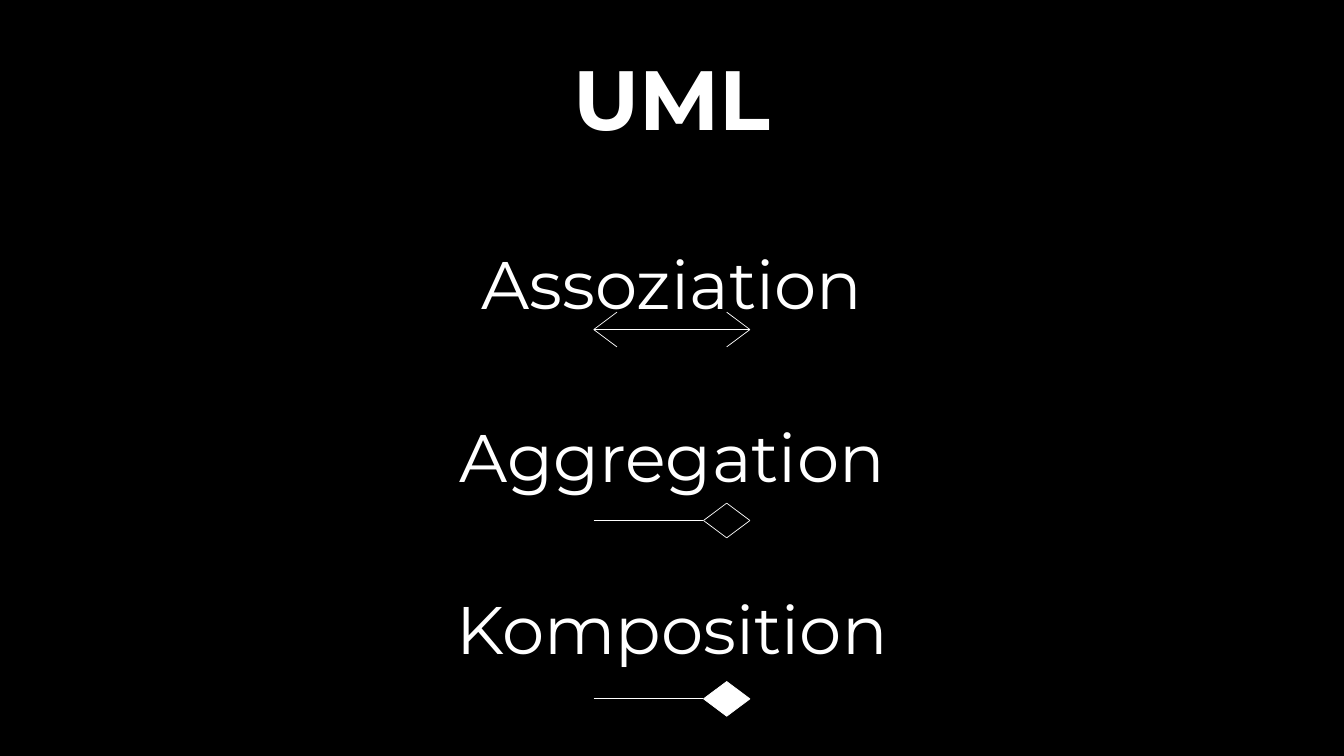
from lxml import etree
from pptx import Presentation
from pptx.dml.color import RGBColor
from pptx.enum import shapes, text
from pptx.oxml.ns import qn
from pptx.util import Pt

COLORS = {"background": "000000", "ink": "FFFFFF"}
FONT = "Montserrat"

# Content: box, paragraphs, size, bold, line spacing, space between
TEXTS = [
    ((10.8, 22.3, 938.4, 102.2), ["UML"], 60, True, 0.9, 0),
    ((10.8, 140.4, 938.4, 312.5),
     ["Assoziation", "Aggregation", "Komposition"], 48, False, 2, 8),
]
# Symbols: kind, height of the axis
SYMBOLS = [("arrows", 235.4), ("open", 371.8), ("filled", 499.2)]
LEFT, RIGHT = 424.1, 535.7
HEAD_W, HEAD_H = 16.6, 12.4


def rgb(name):
    return RGBColor.from_string(COLORS[name])


def add_text(s, box, lines, size, bold, spacing, gap):
    tf = s.shapes.add_textbox(*map(Pt, box)).text_frame
    tf.word_wrap = True
    tf.vertical_anchor = text.MSO_ANCHOR.MIDDLE
    for i, line in enumerate(lines):
        p = tf.add_paragraph() if i else tf.paragraphs[0]
        p.alignment = text.PP_ALIGN.CENTER
        p.line_spacing = spacing
        p.space_before = Pt(gap if i else 0)
        r = p.add_run()
        r.text = line
        r.font.name, r.font.size, r.font.bold = FONT, Pt(size), bold
        r.font.color.rgb = rgb("ink")


def add_line(group, x1, y1, x2, y2):
    c = group.shapes.add_connector(
        shapes.MSO_CONNECTOR.STRAIGHT, Pt(x1), Pt(y1), Pt(x2), Pt(y2))
    c.line.color.rgb = rgb("ink")
    c.line.width = Pt(0.5)
    etree.SubElement(c._element.spPr, qn("a:effectLst"))
    return c


def add_symbol(s, kind, y):
    group = s.shapes.add_group_shape()
    diamond_left = RIGHT - 2 * HEAD_W
    diamond = None
    if kind == "filled":
        diamond = group.shapes.add_shape(
            shapes.MSO_SHAPE.DIAMOND, Pt(diamond_left), Pt(y - HEAD_H),
            Pt(2 * HEAD_W), Pt(2 * HEAD_H))
        diamond.shadow.inherit = False
        diamond.fill.solid()
        diamond.fill.fore_color.rgb = rgb("ink")
        diamond.line.fill.background()

    # Axis, then two strokes from each tip
    start = LEFT if kind == "arrows" else diamond_left
    axis_end = RIGHT if kind == "arrows" else diamond_left
    axis = add_line(group, LEFT, y, axis_end, y)
    if diamond is not None:
        axis.end_connect(diamond, 1)
    for tip, inward in ((RIGHT, -HEAD_W), (start, HEAD_W)):
        for rise in (-HEAD_H, HEAD_H):
            add_line(group, tip, y, tip + inward, y + rise)


prs = Presentation()
prs.slide_width, prs.slide_height = Pt(960), Pt(540)
s = prs.slides.add_slide(prs.slide_layouts[6])
s.background.fill.solid()
s.background.fill.fore_color.rgb = rgb("background")

# Title and terms
for item in TEXTS:
    add_text(s, *item)

# Relationship symbols
for kind, y in SYMBOLS:
    add_symbol(s, kind, y)

prs.save("out.pptx")
